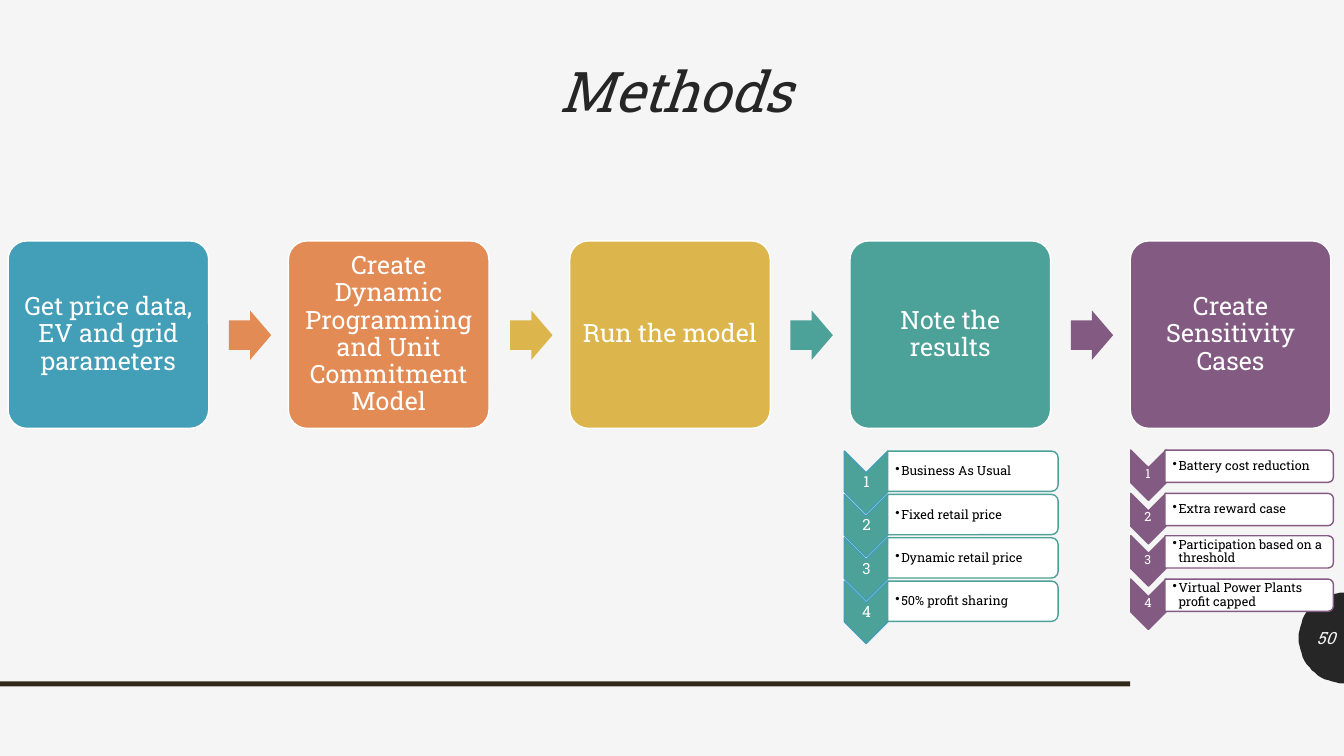
"""Builds the Methods slide: five process steps, two with numbered lists below."""
import math

import lxml.etree
import pptx
import pptx.dml.color
import pptx.enum.shapes
import pptx.enum.text
import pptx.oxml.ns
import pptx.util

PX = 9144
FONT = "Roboto Slab"
WHITE, DARK, BLUE, TEAL, PURPLE = "FFFFFF", "262626", "439EB7", "4CA198", "835B82"
KIND = pptx.enum.shapes.MSO_SHAPE
ALIGN = pptx.enum.text.PP_ALIGN
ANCHOR = pptx.enum.text.MSO_ANCHOR
color = pptx.dml.color.RGBColor.from_string

deck = pptx.Presentation()
deck.slide_width, deck.slide_height = 1333 * PX, 750 * PX
slide = deck.slides.add_slide(deck.slide_layouts[6])
slide.background.fill.solid()
slide.background.fill.fore_color.rgb = color("F5F5F5")


def draw(kind, box, fill, line=None, rotation=0, adjustments=()):
    """Add a preset shape with a flat fill and an optional 1 pt outline."""
    shape = slide.shapes.add_shape(kind, *(length * PX for length in box))
    shape.shadow.inherit = False
    shape.rotation = rotation
    for index, value in enumerate(adjustments):
        shape.adjustments[index] = value
    shape.fill.solid()
    shape.fill.fore_color.rgb = color(fill)
    if line:
        shape.line.color.rgb = color(line)
        shape.line.width = pptx.util.Pt(1)
    else:
        shape.line.fill.background()
    return shape


def write(target, words, size, ink, insets, align=ALIGN.CENTER,
          anchor=ANCHOR.MIDDLE, spacing=0.9, italic=False):
    """Put one paragraph into a shape, or into a new text box given as lengths."""
    if isinstance(target, tuple):
        target = slide.shapes.add_textbox(*(length * PX for length in target))
    frame = target.text_frame
    paragraph = frame.paragraphs[0]
    run = paragraph.add_run()
    left, top, right, bottom = (inset * PX for inset in insets)
    formats = {
        frame: {"word_wrap": True, "vertical_anchor": anchor, "margin_left": left,
                "margin_top": top, "margin_right": right, "margin_bottom": bottom},
        paragraph: {"alignment": align, "line_spacing": spacing},
        run: {"text": words},
        run.font: {"name": FONT, "size": pptx.util.Pt(size), "italic": italic},
    }
    for part, values in formats.items():
        for attribute, value in values.items():
            setattr(part, attribute, value)
    run.font.color.rgb = color(ink)
    return paragraph


arc = [(1333 - 45 * math.sin(math.radians(angle)), 633 - 45 * math.cos(math.radians(angle)))
       for angle in range(0, 181, 5)]
outline = slide.shapes.build_freeform(*arc[0], scale=PX)
outline.add_line_segments(arc[1:], close=True)
page_disc = outline.convert_to_shape()
page_disc.shadow.inherit = False
page_disc.fill.solid()
page_disc.fill.fore_color.rgb = color(DARK)
page_disc.line.fill.background()

write((83, 61, 1174, 118), "Methods", 40, DARK, (0, 1, 0, 0),
      anchor=ANCHOR.TOP, spacing=0.93, italic=True)
draw(KIND.RECTANGLE, (0, 676, 1121, 5), "32281A")

steps = [
    ("Get price data, EV and grid parameters", BLUE),
    ("Create Dynamic Programming and Unit Commitment Model", "E28B55"),
    ("Run the model", "DCB64D"),
    ("Note the results", TEAL),
    ("Create Sensitivity Cases", PURPLE),
]
for number, (step, tint) in enumerate(steps):
    offset = round(278.3 * number)
    if number:
        draw(KIND.RIGHT_ARROW, (offset - 51, 308, 42, 49), tint, adjustments=(0.6, 0.5))
    card = draw(KIND.ROUNDED_RECTANGLE, (8 + offset, 239, 199, 186), tint, WHITE,
                adjustments=(0.1,))
    write(card, step, 18, WHITE, (7, 7, 7, 7))

case_lists = [
    {"cases": ["Business As Usual", "Fixed retail price", "Dynamic retail price",
               "50% profit sharing"],
     "tint": TEAL, "edge": BLUE, "pitch": 43, "number_size": 11,
     "chevron": (828, 457, 62, 43), "number": (838, 469, 43, 19),
     "panel": (945, 383, 40, 169), "case": (881, 450, 167, 36)},
    {"cases": ["Battery cost reduction", "Extra reward case",
               "Participation based on a threshold", "Virtual Power Plants profit capped"],
     "tint": PURPLE, "edge": PURPLE, "pitch": 42.7, "number_size": 9,
     "chevron": (1114, 454, 50, 35), "number": (1121, 463, 35, 15),
     "panel": (1223, 379, 32, 167), "case": (1156, 448, 165, 29)},
]
for group in case_lists:
    for row, case in enumerate(group["cases"]):
        drop = round(group["pitch"] * row)
        chevron, number, panel, label = (
            (left, top + drop, width, height) for left, top, width, height
            in (group[part] for part in ("chevron", "number", "panel", "case")))
        draw(KIND.CHEVRON, chevron, group["tint"], group["edge"], 90)
        write(number, str(row + 1), group["number_size"], WHITE, (1, 1, 1, 1))
        draw(KIND.ROUND_2_SAME_RECTANGLE, panel, WHITE, group["tint"], 90)
        entry = write(label, case, 9, "000000", (7, 1, 1, 1), ALIGN.LEFT)
        properties = entry._p.get_or_add_pPr()
        properties.set("marL", str(6 * PX))
        properties.set("indent", str(-6 * PX))
        bullet = lxml.etree.SubElement(properties, pptx.oxml.ns.qn("a:buChar"))
        bullet.set("char", "•")

write((1289, 613, 45, 40), "50", 12, "F5F5F5", (10, 5, 10, 5), ALIGN.RIGHT,
      spacing=1.0, italic=True)

deck.save("out.pptx")
